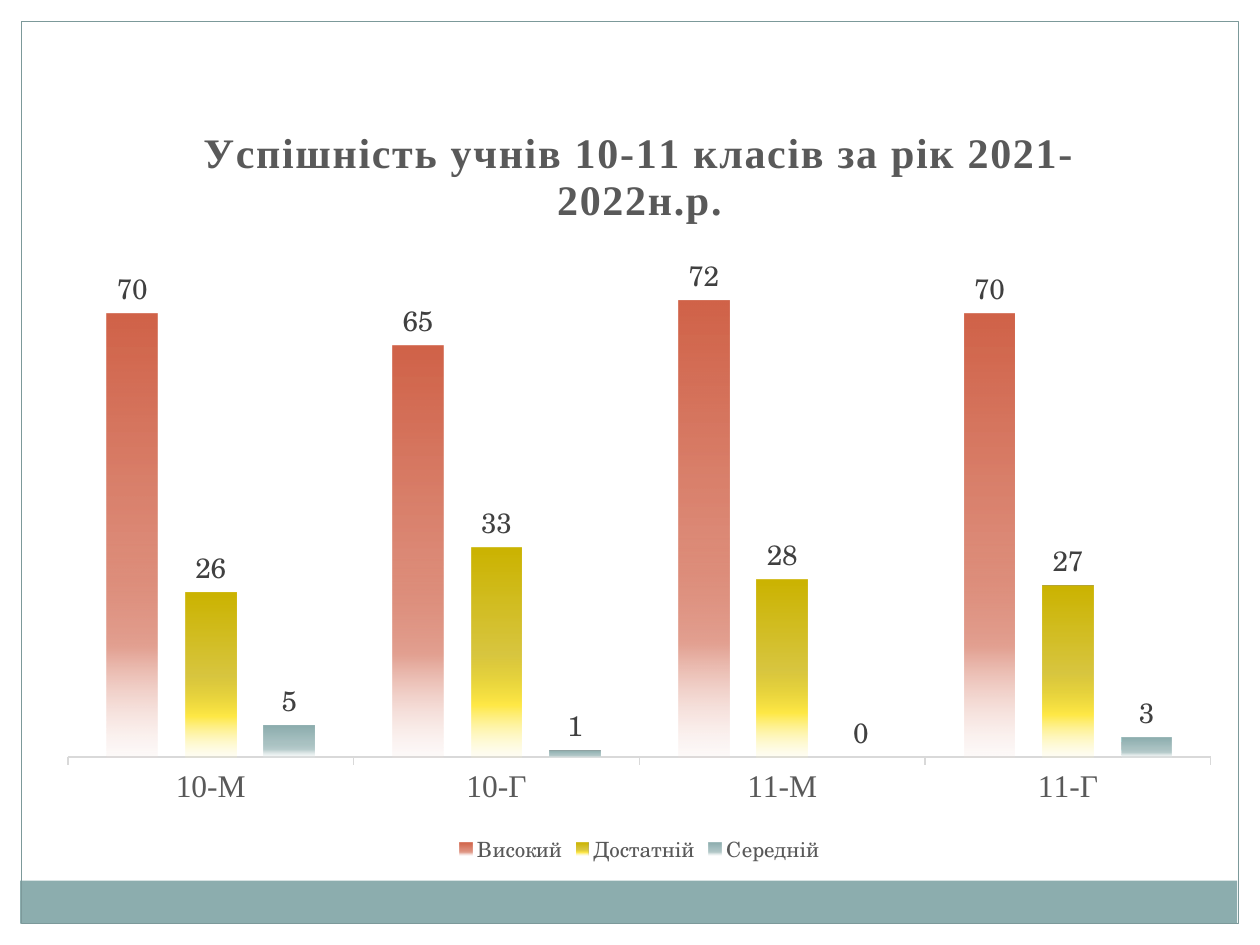
from lxml import etree
from pptx import Presentation
from pptx.chart.data import CategoryChartData
from pptx.dml.color import RGBColor
from pptx.enum.chart import XL_CHART_TYPE as ChartType, XL_LABEL_POSITION as LabelPos
from pptx.enum.chart import XL_LEGEND_POSITION as LegendPos, XL_TICK_MARK as Tick
from pptx.enum.shapes import MSO_SHAPE as Shape
from pptx.oxml import parse_xml
from pptx.oxml.ns import nsdecls, qn
from pptx.util import Inches, Pt

WHITE = RGBColor(0xFF, 0xFF, 0xFF)
TEAL = RGBColor(0x8C, 0xAD, 0xAE)
FRAME = RGBColor(0x7C, 0x99, 0x9A)
BLACK = RGBColor(0, 0, 0)
GREY = RGBColor(0x59, 0x59, 0x59)
DARK = RGBColor(0x40, 0x40, 0x40)
PALE = RGBColor(0xD9, 0xD9, 0xD9)
SERIF, TIMES = "TeX Gyre Schola", "Times New Roman"

TITLE = "Успішність учнів 10-11 класів за рік 2021-2022н.р."
CLASSES = ["10-М", "10-Г", "11-М", "11-Г"]
# name, values, gradient colours (main, lighter, lightest)
SERIES = [
    ("Високий", (70, 65, 72, 70), ("D16349", "E3A192", "F6E0DB")),
    ("Достатній", (26, 33, 28, 27), ("CCB400", "FFE947", "FFF8C2")),
    ("Середній", (5, 1, 0, 3), ("8CADAE", "BACECE", "E8EFEF")),
]
# left, top, width, height, fill, line
PANELS = [
    (0, 0, 10, 0.17, WHITE, None),
    (9.83, 0, 0.17, 7.5, WHITE, None),
    (0, 0, 0.17, 7.5, WHITE, None),
    (0.16, 6.99, 9.66, 0.34, TEAL, None),
    (0.17, 0.17, 9.66, 7.16, None, FRAME),
]
CHART_BOX = (0.35, 0.76, 9.45, 6.14)
PLOT_BOX = {"x": 0.02, "y": 0.2, "w": 0.96, "h": 0.655}  # shares of the chart


def add_panel(slide, left, top, width, height, fill, line):
    sp = slide.shapes.add_shape(Shape.RECTANGLE, *map(Inches, (left, top, width, height)))
    sp.shadow.inherit = False
    if fill is None:
        sp.fill.background()
    else:
        sp.fill.solid()
        sp.fill.fore_color.rgb = fill
    if line is None:
        sp.line.fill.background()
    else:
        sp.line.color.rgb = line
        sp.line.width = Pt(0.75)


def set_font(font, size, color, name, bold=False):
    font.size, font.name, font.bold = Pt(size), name, bold
    font.color.rgb = color


def add_title(chart, text, size, color, name, spacing):
    """Write the chart title; spacing is in hundredths of a point."""
    chart.has_title = True
    p = chart.chart_title.text_frame.paragraphs[0]
    r = p.add_run()
    r.text = text
    set_font(r.font, size, color, name, bold=True)
    r.font._element.set("spc", str(spacing))
    chart.chart_title.include_in_layout = False


def fade_down(series, main, lighter, lightest):
    """Fill the columns with a vertical gradient that fades out at the foot."""
    stops = [(0, main, 100), (51, main, 75), (75, lighter, 100), (100, lightest, 15)]
    gs = "".join(
        f'<a:gs pos="{pos * 1000}"><a:srgbClr val="{color}">'
        f'<a:alpha val="{alpha * 1000}"/></a:srgbClr></a:gs>'
        for pos, color, alpha in stops)
    series.format.fill.solid()
    solid = series._element.spPr.find(qn("a:solidFill"))
    solid.getparent().replace(solid, parse_xml(
        f'<a:gradFill {nsdecls("a")} rotWithShape="1"><a:gsLst>{gs}</a:gsLst>'
        '<a:lin ang="5400000" scaled="0"/></a:gradFill>'))
    series.format.line.fill.background()


def place_plot(chart, box):
    area = chart._chartSpace.chart.plotArea
    for old in area.findall(qn("c:layout")):
        area.remove(old)
    layout = etree.Element(qn("c:layout"))
    manual = etree.SubElement(layout, qn("c:manualLayout"))
    settings = {"layoutTarget": "inner", "xMode": "edge", "yMode": "edge", **box}
    for tag, value in settings.items():
        etree.SubElement(manual, qn(f"c:{tag}")).set("val", str(value))
    area.insert(0, layout)


def add_results_chart(slide):
    data = CategoryChartData(number_format="0")
    data.categories = CLASSES
    for name, values, _ in SERIES:
        data.add_series(name, values)
    chart = slide.shapes.add_chart(
        ChartType.COLUMN_CLUSTERED, *map(Inches, CHART_BOX), data).chart
    set_font(chart.font, 10, BLACK, SERIF)
    add_title(chart, TITLE, 24, GREY, TIMES, spacing=100)

    chart.has_legend = True
    chart.legend.position = LegendPos.BOTTOM
    chart.legend.include_in_layout = False
    set_font(chart.legend.font, 12, GREY, SERIF)

    cat_axis, val_axis = chart.category_axis, chart.value_axis
    cat_axis.major_tick_mark = Tick.OUTSIDE
    cat_axis.format.line.color.rgb = PALE
    cat_axis.format.line.width = Pt(0.75)
    set_font(cat_axis.tick_labels.font, 18, GREY, TIMES)
    val_axis.minimum_scale, val_axis.maximum_scale = 0, 80
    val_axis.has_major_gridlines = False
    val_axis.visible = False

    plot = chart.plots[0]
    plot.gap_width, plot.overlap = 154, -55
    plot.vary_by_categories = False
    for series, (_, _, colors) in zip(plot.series, SERIES):
        fade_down(series, *colors)
        labels = series.data_labels
        labels.show_value = True
        labels.position = LabelPos.OUTSIDE_END
        labels.number_format, labels.number_format_is_linked = "0", False
        set_font(labels.font, 16, DARK, SERIF)
    place_plot(chart, PLOT_BOX)


def main():
    prs = Presentation()
    prs.slide_width, prs.slide_height = Inches(10), Inches(7.5)
    slide = prs.slides.add_slide(prs.slide_layouts[6])
    for panel in PANELS:
        add_panel(slide, *panel)
    add_results_chart(slide)
    prs.save("out.pptx")


if __name__ == "__main__":
    main()
